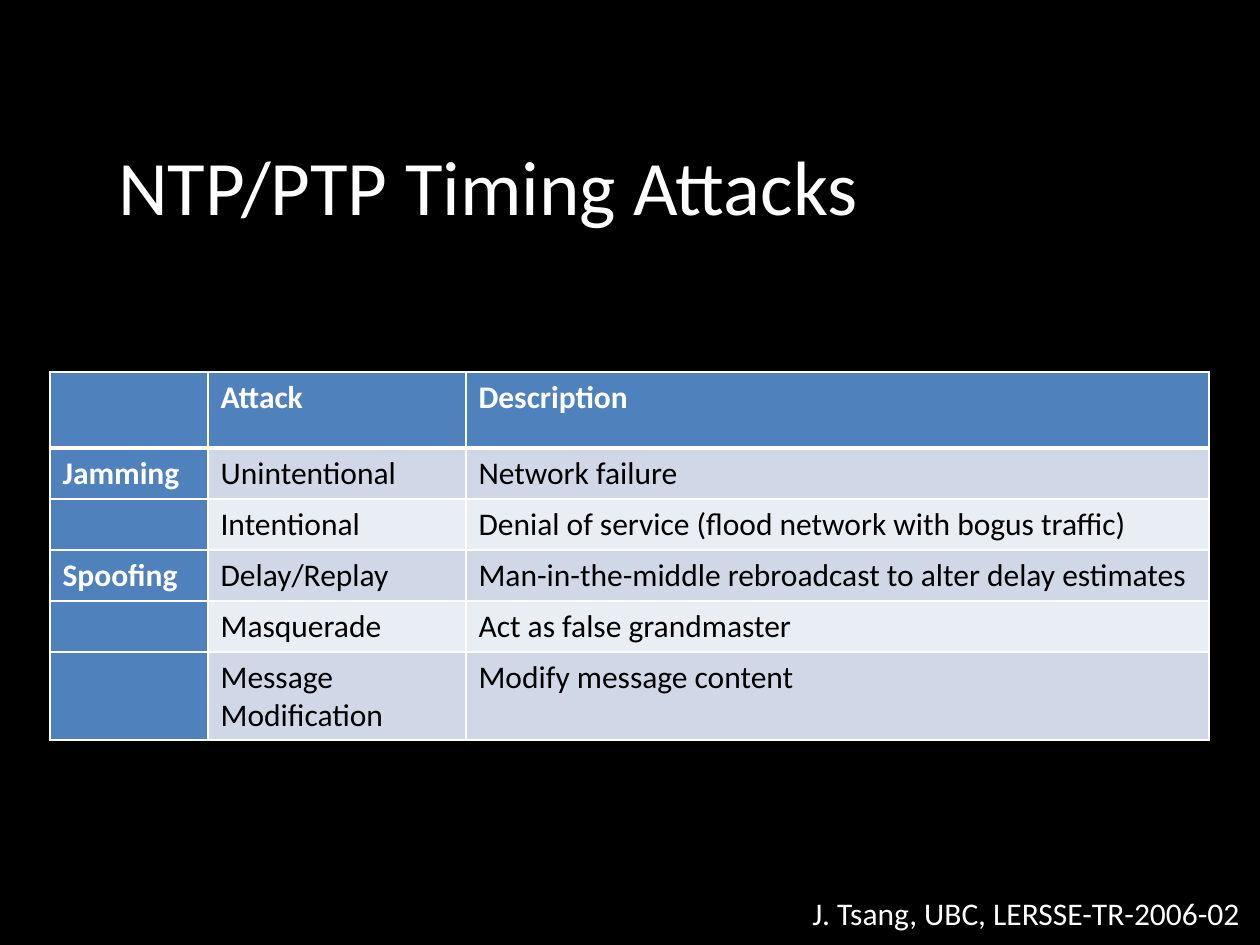
from lxml.etree import SubElement
from pptx import Presentation
from pptx.dml.color import RGBColor
from pptx.enum.text import MSO_ANCHOR, MSO_AUTO_SIZE, PP_ALIGN
from pptx.oxml.ns import qn
from pptx.util import Pt

TITLE = "NTP/PTP Timing Attacks"
CITATION = "J. Tsang, UBC, LERSSE-TR-2006-02"
ATTACKS = [
    ("", "Attack", "Description"),
    ("Jamming", "Unintentional", "Network failure"),
    ("", "Intentional", "Denial of service (flood network with bogus traffic)"),
    ("Spoofing", "Delay/Replay", "Man-in-the-middle rebroadcast to alter delay estimates"),
    ("", "Masquerade", "Act as false grandmaster"),
    ("", "Message Modification", "Modify message content"),
]


class Theme:
    font = "Calibri"
    background = "000000"
    light = "FFFFFF"
    dark = "000000"
    heading = "4F81BD"
    bands = ("D0D8E8", "E9EDF4")
    title_size = 44
    body_size = 18
    rule = 1
    header_rule = 3


# Lengths in px, 126 to the inch
SLIDE = (1260, 945)
TITLE_BOX = (101, 132, 775, 106)
CITATION_BOX = (800, 888, 457, 50)
TABLE_ORIGIN = (50, 372)
COLUMN_WIDTHS = (158, 258, 743)
ROW_HEIGHTS = (76, 51, 51, 51, 51, 88)


def px(length):
    return round(length * 914400 / 126)


def place(shape, box):
    shape.left, shape.top, shape.width, shape.height = map(px, box)


def write(frame, text, size=Theme.body_size, color=Theme.light, bold=False,
          align=PP_ALIGN.LEFT):
    paragraph = frame.paragraphs[0]
    paragraph.alignment = align
    if not text:
        return
    run = paragraph.add_run()
    run.text = text
    run.font.name = Theme.font
    run.font.size = Pt(size)
    run.font.bold = bold
    run.font.color.rgb = RGBColor.from_string(color)


def fit_to_line(frame):
    """Keep the text on one line, in a box that grows with it."""
    frame.word_wrap = False
    frame.auto_size = MSO_AUTO_SIZE.SHAPE_TO_FIT_TEXT
    frame.vertical_anchor = MSO_ANCHOR.TOP


def fill_cell(cell, color):
    cell.fill.solid()
    cell.fill.fore_color.rgb = RGBColor.from_string(color)


def border_cell(cell, **widths):
    """Draw the sides named by L, R, T and B, with widths in points."""
    properties = cell._tc.get_or_add_tcPr()
    for position, (side, width) in enumerate(widths.items()):
        line = properties.makeelement(qn(f"a:ln{side}"), {"w": str(Pt(width))})
        solid = SubElement(line, qn("a:solidFill"))
        SubElement(solid, qn("a:srgbClr"), val=Theme.light)
        properties.insert(position, line)


def add_attack_table(slide):
    table = slide.shapes.add_table(
        len(ATTACKS), len(COLUMN_WIDTHS), *map(px, TABLE_ORIGIN),
        px(sum(COLUMN_WIDTHS)), px(sum(ROW_HEIGHTS))).table
    for column, width in zip(table.columns, COLUMN_WIDTHS):
        column.width = px(width)
    for row, height in zip(table.rows, ROW_HEIGHTS):
        row.height = px(height)
    for r, texts in enumerate(ATTACKS):
        for c, text in enumerate(texts):
            cell = table.cell(r, c)
            heading = r == 0 or c == 0
            write(cell.text_frame, text, bold=heading,
                  color=Theme.light if heading else Theme.dark)
            fill_cell(cell, Theme.heading if heading else Theme.bands[(r - 1) % 2])
            border_cell(cell, L=Theme.rule, R=Theme.rule,
                        T=Theme.header_rule if r == 1 else Theme.rule,
                        B=Theme.header_rule if r == 0 else Theme.rule)


def main():
    presentation = Presentation()
    presentation.slide_width, presentation.slide_height = map(px, SLIDE)
    slide = presentation.slides.add_slide(presentation.slide_layouts[5])
    background = slide.background.fill
    background.solid()
    background.fore_color.rgb = RGBColor.from_string(Theme.background)

    title = slide.shapes.title
    place(title, TITLE_BOX)
    fit_to_line(title.text_frame)
    write(title.text_frame, TITLE, size=Theme.title_size, align=PP_ALIGN.CENTER)

    citation = slide.shapes.add_textbox(*map(px, CITATION_BOX))
    fit_to_line(citation.text_frame)
    write(citation.text_frame, CITATION)

    add_attack_table(slide)
    presentation.save("out.pptx")


if __name__ == "__main__":
    main()
